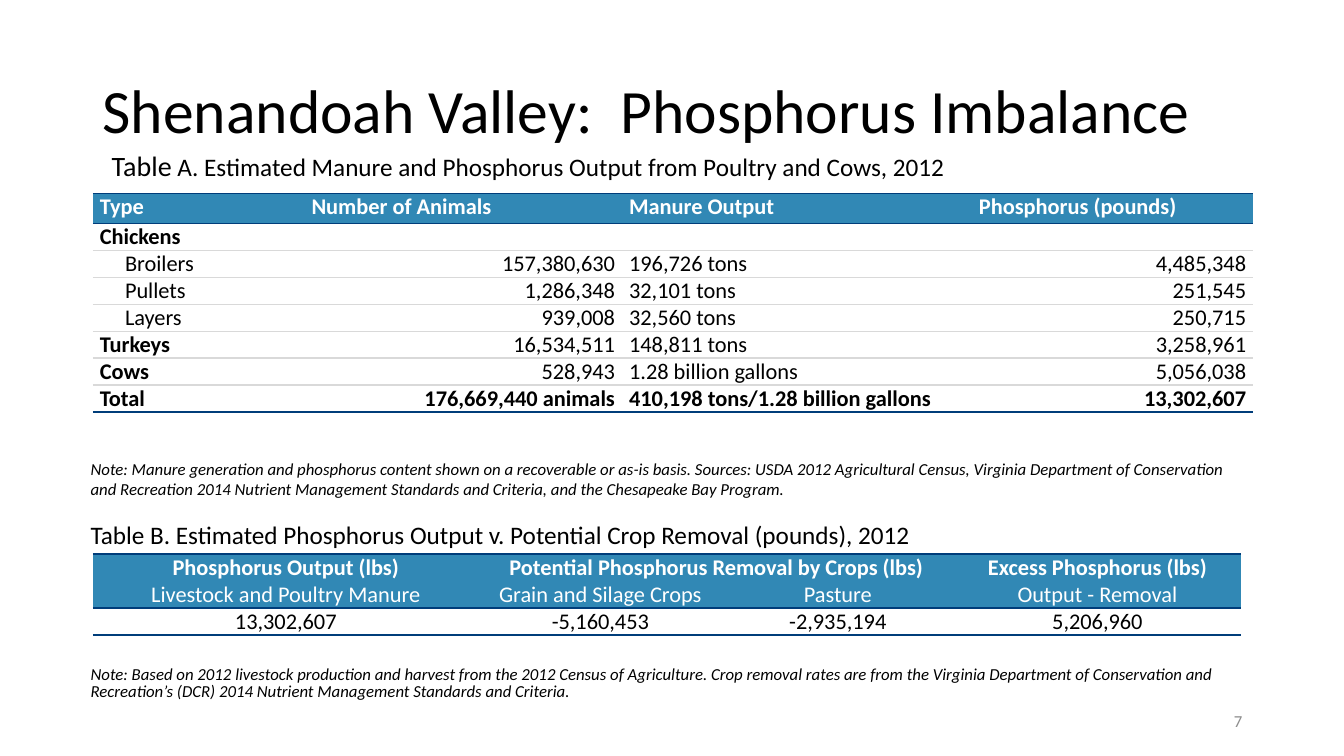
"""Build the Shenandoah Valley phosphorus imbalance slide."""
from lxml.etree import SubElement
from pptx import Presentation
from pptx.dml.color import RGBColor
from pptx.enum.text import MSO_ANCHOR as Anchor, PP_ALIGN as Align
from pptx.oxml import parse_xml
from pptx.oxml.ns import nsdecls, qn
from pptx.util import Inches, Pt

BLACK = RGBColor(0, 0, 0)
WHITE = RGBColor(255, 255, 255)
BLUE = RGBColor(0x31, 0x88, 0xB5)
NAVY = RGBColor(0x00, 0x3D, 0x7A)
PALE = RGBColor(0xD9, 0xD9, 0xD9)
GRAY = RGBColor(0x8C, 0x8C, 0x8C)
PLAIN = "{2D5ABB26-0587-4C30-8999-92F81FD0307C}"
LEFT, MID, RIGHT = Align.LEFT, Align.CENTER, Align.RIGHT

TEXTS = [
    ((0.92, 0.4, 11.5, 1.45), [("Shenandoah Valley:  Phosphorus Imbalance", 44)],
     dict(anchor=Anchor.MIDDLE, space=0.9)),
    ((1.01, 1.42, 11.5, 0.44),
     [("Table", 20),
      (" A. Estimated Manure and Phosphorus Output from Poultry and Cows, 2012", 18)], {}),
    ((0.8, 4.5, 11.62, 0.5),
     [("Note: Manure generation and phosphorus content shown on a recoverable or as-is basis. "
       "Sources: USDA 2012 Agricultural Census, Virginia Department of Conservation and "
       "Recreation 2014 Nutrient Management Standards and Criteria, and the Chesapeake Bay "
       "Program.", 12)], dict(italic=True)),
    ((0.8, 5.1, 11.62, 0.4),
     [("Table B. Estimated Phosphorus Output v. Potential Crop Removal (pounds), 2012", 18)], {}),
    ((0.8, 6.57, 11.39, 0.44),
     [("Note: Based on 2012 livestock production and harvest from the 2012 Census of "
       "Agriculture. Crop removal rates are from the Virginia Department of Conservation and "
       "Recreation’s (DCR) 2014 Nutrient Management Standards and Criteria.", 12)],
     dict(italic=True, space=Pt(12))),
    ((9.42, 6.95, 3, 0.4), [("7", 12)],
     dict(anchor=Anchor.MIDDLE, align=RIGHT, color=GRAY)),
]
ANIMALS = [
    ("Type", "Number of Animals", "Manure Output", "Phosphorus (pounds)"),
    ("Chickens", "", "", ""),
    ("Broilers", "157,380,630", "196,726 tons", "4,485,348"),
    ("Pullets", "1,286,348", "32,101 tons", "251,545"),
    ("Layers", "939,008", "32,560 tons", "250,715"),
    ("Turkeys", "16,534,511", "148,811 tons", "3,258,961"),
    ("Cows", "528,943", "1.28 billion gallons", "5,056,038"),
    ("Total", "176,669,440 animals", "410,198 tons/1.28 billion gallons", "13,302,607"),
]
BIRDS = ("Broilers", "Pullets", "Layers")
CROPS = [
    ("Phosphorus Output (lbs)", "Potential Phosphorus Removal by Crops (lbs)", "",
     "Excess Phosphorus (lbs)"),
    ("Livestock and Poultry Manure", "Grain and Silage Crops", "Pasture", "Output - Removal"),
    ("13,302,607", "-5,160,453", "-2,935,194", "5,206,960"),
]


def write(frame, runs, align=LEFT, color=BLACK, bold=False, italic=False,
          anchor=Anchor.TOP, space=None, indent=0):
    frame.word_wrap = True
    frame.vertical_anchor = anchor
    para = frame.paragraphs[0]
    para.alignment = align
    if space:
        para.line_spacing = space
    if indent:
        para._p.get_or_add_pPr().set("marL", str(Inches(indent)))
    for text, size in runs:
        if not text:
            SubElement(para._p, qn("a:endParaRPr"), sz=str(size * 100))
            continue
        run = para.add_run()
        run.text = text
        font = run.font
        font.name, font.size = "Calibri", Pt(size)
        font.bold, font.italic = bold, italic
        font.color.rgb = color


def rule(cell, tag, color, width):
    line = parse_xml(
        f'<a:{tag} {nsdecls("a")} w="{Pt(width)}"><a:solidFill>'
        f'<a:srgbClr val="{color}"/></a:solidFill></a:{tag}>')
    cell._tc.get_or_add_tcPr().append(line)


def grid(slide, box, cols, rows, heads, style, edges):
    frame = slide.shapes.add_table(len(rows), len(cols), *map(Inches, box))
    table = frame.table
    table._tbl.tblPr.find(qn("a:tableStyleId")).text = PLAIN
    table.first_row = table.horz_banding = False
    for col, width in zip(table.columns, cols):
        col.width = Inches(width)
    first = box[3] - 0.266 * (len(rows) - 1)
    for r, row in enumerate(rows):
        table.rows[r].height = Inches(0.266 if r else first)
        for c, text in enumerate(row):
            cell = table.cell(r, c)
            cell.margin_left = cell.margin_right = Inches(0.07)
            cell.margin_top = cell.margin_bottom = 0
            write(cell.text_frame, [(text, 16)],
                  color=WHITE if r < heads else BLACK, **style(r, c, row))
            for tag, edge in zip(("lnT", "lnB"), (edges[r], edges[r + 1])):
                if edge:
                    rule(cell, tag, *edge)
            if r < heads:
                cell.fill.solid()
                cell.fill.fore_color.rgb = BLUE
            else:
                cell.fill.background()
    return table


def herd(r, c, row):
    bird = row[0] in BIRDS
    return dict(bold=r in (0, len(ANIMALS) - 1) or (c == 0 and not bird),
                align=RIGHT if r and c in (1, 3) else LEFT,
                indent=0.25 if bird and c == 0 else 0)


def crop(r, c, row):
    return dict(bold=r == 0, align=MID)


def main():
    deck = Presentation()
    deck.slide_width, deck.slide_height = Inches(13.33), Inches(7.5)
    slide = deck.slides.add_slide(deck.slide_layouts[6])
    for box, runs, form in TEXTS:
        area = slide.shapes.add_textbox(*map(Inches, box))
        write(area.text_frame, runs, **form)
    dark, light = (NAVY, 1.5), (PALE, 1)
    grid(slide, (0.92, 1.92, 11.5, 2.16), (2.1, 3.15, 3.47, 2.79), ANIMALS, 1, herd,
         [dark, dark] + [light] * 6 + [dark])
    table = grid(slide, (0.92, 5.5, 11.39, 0.8), (3.83, 2.41, 2.3, 2.85), CROPS, 2, crop,
                 [dark, None, dark, dark])
    table.cell(0, 1).merge(table.cell(0, 2))
    deck.save("out.pptx")


if __name__ == "__main__":
    main()
